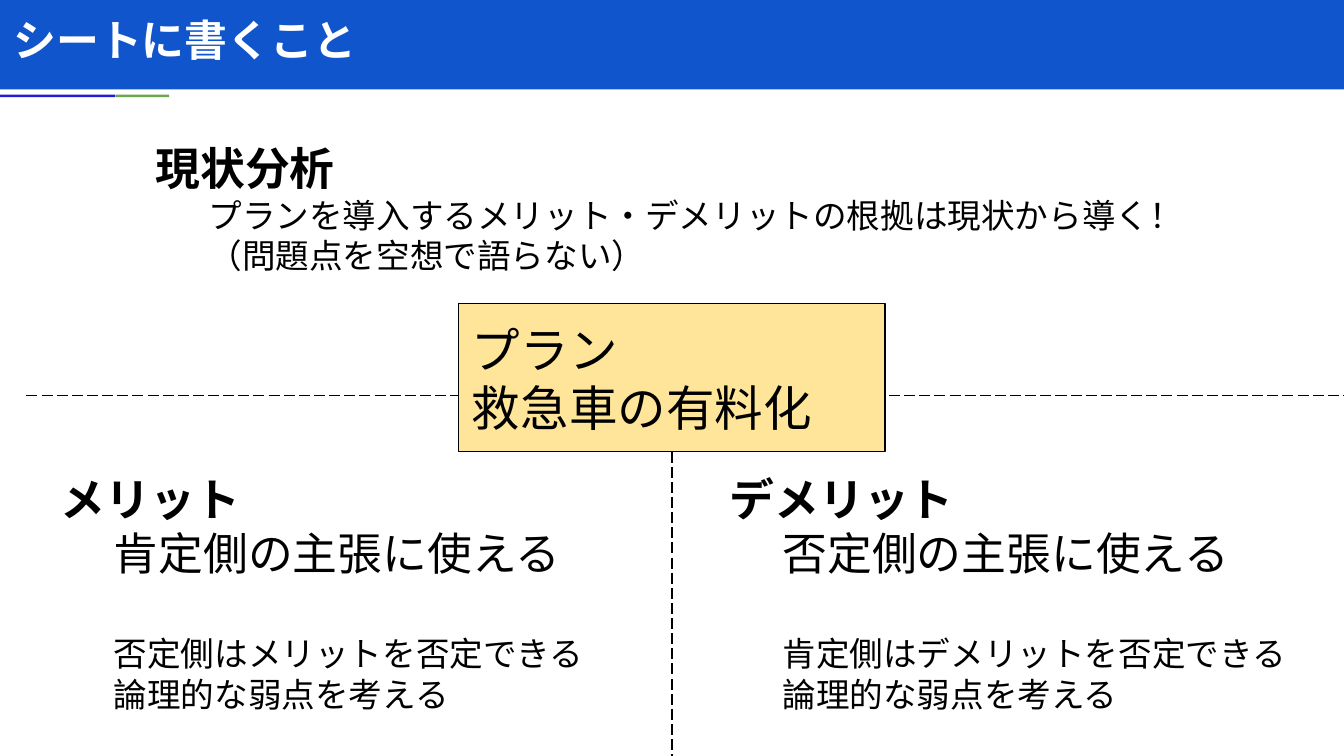
from lxml.etree import SubElement
from pptx import Presentation
from pptx.dml.color import RGBColor as RGB
from pptx.enum.dml import MSO_LINE as Dash
from pptx.enum.shapes import MSO_CONNECTOR as Link, MSO_SHAPE as Form
from pptx.enum.text import MSO_ANCHOR as Anchor, PP_ALIGN as Align
from pptx.oxml.ns import qn
from pptx.util import Cm, Pt

BLACK = RGB(0, 0, 0)
WHITE = RGB(255, 255, 255)
BLUE = RGB(0x11, 0x55, 0xCC)
NAVY = RGB(0x21, 0x1D, 0xD1)
GREEN = RGB(0x6A, 0xA8, 0x4F)
CREAM = RGB(0xFF, 0xE5, 0x99)
WIDE, HIGH = 25.4, 14.29
MID = WIDE / 2
PAD = Cm(0.25)


def cms(*box):
    return [Cm(n) for n in box]


def add_rect(slide, box, fill):
    rect = slide.shapes.add_shape(Form.RECTANGLE, *cms(*box))
    rect.shadow.inherit = False
    rect.fill.solid()
    rect.fill.fore_color.rgb = fill
    rect.line.fill.background()
    return rect


def add_dash(slide, ends):
    line = slide.shapes.add_connector(Link.STRAIGHT, *cms(*ends))
    line.line.color.rgb = BLACK
    line.line.width = Pt(0.75)
    line.line.dash_style = Dash.LONG_DASH
    SubElement(line._element.spPr, qn("a:effectLst"))


def set_frame(frame, anchor=Anchor.TOP):
    frame.word_wrap = True
    frame.vertical_anchor = anchor
    frame.margin_left = frame.margin_right = PAD
    frame.margin_top = frame.margin_bottom = PAD


def add_para(frame, text, size, bold=False, color=BLACK, font="Lato",
             indent=0, gap=0):
    """Fill the first paragraph if it is empty, else append one."""
    para = frame.paragraphs[0]
    if para.text:
        para = frame.add_paragraph()
    para.text = text
    para.alignment = Align.LEFT
    para.space_before = Pt(gap)
    para.font.size = Pt(size)
    para.font.bold = bold
    para.font.name = font
    para.font.color.rgb = color
    props = para._p.get_or_add_pPr()
    props.set("marL", str(Cm(indent)))
    props.set("indent", "0")


def add_header(slide, box, title):
    left, top, width, height = box
    add_rect(slide, box, BLUE)
    bar = top + height + 0.1
    add_rect(slide, (left, bar, 2.18, 0.05), NAVY)
    add_rect(slide, (left + 2.18, bar, 1.02, 0.05), GREEN)
    label = slide.shapes.add_textbox(*cms(left, top, 21.36, 1.5))
    set_frame(label.text_frame, Anchor.MIDDLE)
    add_para(label.text_frame, title, 23, True, WHITE, "Noto Sans CJK JP")


def add_notes(slide, box, head, items):
    """Place a bold heading over indented (text, size, gap) items."""
    frame = slide.shapes.add_textbox(*cms(*box)).text_frame
    set_frame(frame)
    add_para(frame, head, 24, True)
    for text, size, gap in items:
        add_para(frame, text, size, indent=1, gap=gap)


def add_side(slide, box, head, user, rival):
    add_notes(slide, box, head, [
        (f"{user}の主張に使える", 24, 0),
        (f"{rival}は{head}を否定できる\n論理的な弱点を考える", 18, 28.8),
    ])


def add_plan(slide, box, lines):
    rect = add_rect(slide, box, CREAM)
    rect.line.color.rgb = BLACK
    rect.line.width = Pt(0.75)
    set_frame(rect.text_frame, Anchor.MIDDLE)
    for line in lines:
        add_para(rect.text_frame, line, 26)


def main():
    deck = Presentation()
    deck.slide_width, deck.slide_height = cms(WIDE, HIGH)
    slide = deck.slides.add_slide(deck.slide_layouts[6])
    add_header(slide, (0, 0, WIDE, 1.69), "シートに書くこと")
    add_dash(slide, (0.5, 7.47, WIDE, 7.47))
    add_dash(slide, (MID, 8.25, MID, HIGH))
    add_notes(slide, (2.69, 2.41, 20.78, 3.68), "現状分析", [
        ("プランを導入するメリット・デメリットの根拠は現状から導く！\n"
         "（問題点を空想で語らない）", 18, 0),
    ])
    pro, con = "肯定側", "否定側"
    add_side(slide, (0.9, 8.67, 11.38, 5.5), "メリット", pro, con)
    add_side(slide, (13.54, 8.67, 11.38, 5.5), "デメリット", con, pro)
    add_plan(slide, (MID - 4.03, 5.74, 8.06, 2.8),
             ["プラン", "救急車の有料化"])
    deck.save("out.pptx")


if __name__ == "__main__":
    main()
